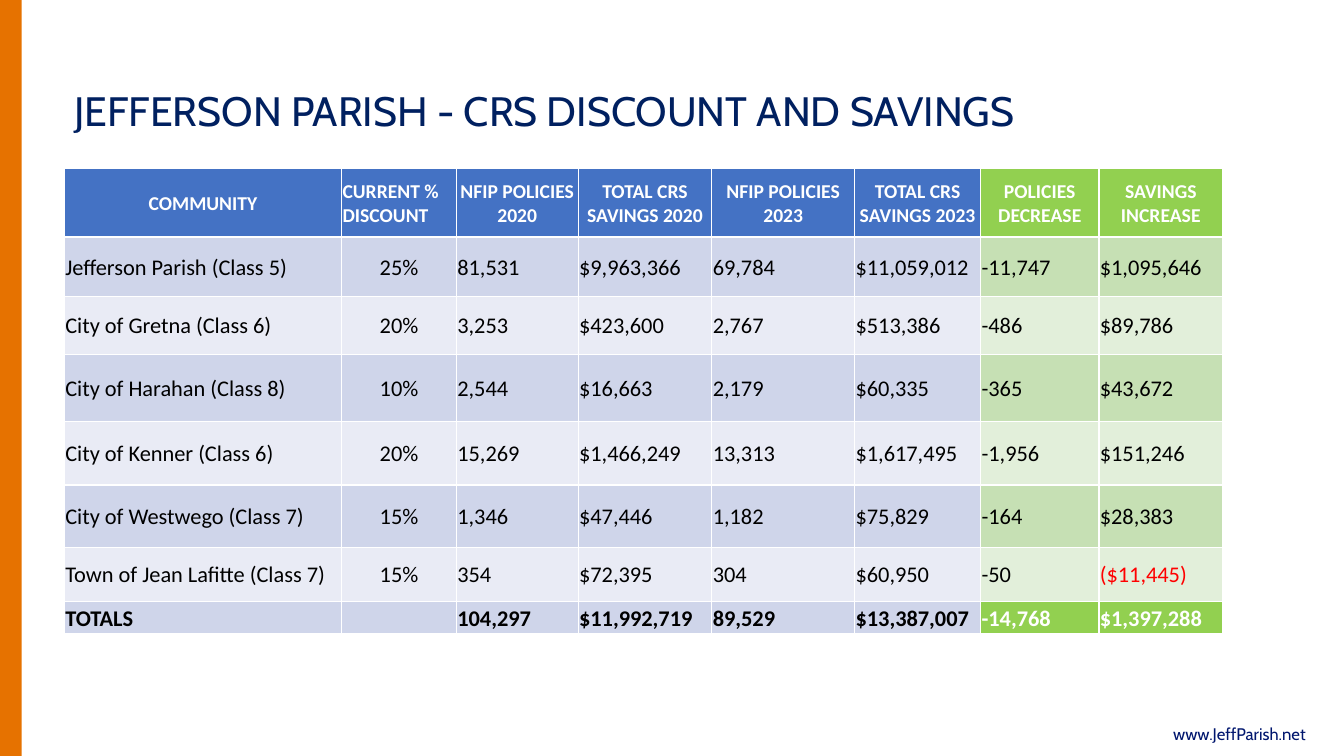
"""Build the Jefferson Parish slide on CRS discount and savings."""
from lxml.etree import SubElement
from pptx import Presentation
from pptx.dml.color import RGBColor
from pptx.enum.shapes import MSO_SHAPE as Shape
from pptx.enum.text import MSO_ANCHOR as Anchor, PP_ALIGN as Align
from pptx.oxml.ns import qn
from pptx.util import Pt

COLORS = {
    "orange": "E67200", "navy": "002060", "link": "00166E",
    "white": "FFFFFF", "black": "000000", "red": "FF0000",
    "blue": "4472C4", "blue dark": "CFD5EA", "blue light": "E9EBF5",
    "green": "92D050", "green dark": "C6E0B4", "green light": "E2EFDA",
}
COLUMN_WIDTHS = [198, 82, 87, 95.5, 102, 90, 84.5, 88.5]
ROW_HEIGHTS = [49, 42.5, 41.5, 47.5, 45.5, 44.5, 39, 23]
ROWS = [
    ["COMMUNITY", "CURRENT % DISCOUNT", "NFIP POLICIES 2020", "TOTAL CRS SAVINGS 2020",
     "NFIP POLICIES 2023", "TOTAL CRS SAVINGS 2023", "POLICIES DECREASE", "SAVINGS INCREASE"],
    ["Jefferson Parish (Class 5)", "25%", "81,531", "$9,963,366",
     "69,784", "$11,059,012", "-11,747", "$1,095,646"],
    ["City of Gretna (Class 6)", "20%", "3,253", "$423,600",
     "2,767", "$513,386", "-486", "$89,786"],
    ["City of Harahan (Class 8)", "10%", "2,544", "$16,663",
     "2,179", "$60,335", "-365", "$43,672"],
    ["City of Kenner (Class 6)", "20%", "15,269", "$1,466,249",
     "13,313", "$1,617,495", "-1,956", "$151,246"],
    ["City of Westwego (Class 7)", "15%", "1,346", "$47,446",
     "1,182", "$75,829", "-164", "$28,383"],
    ["Town of Jean Lafitte (Class 7)", "15%", "354", "$72,395",
     "304", "$60,950", "-50", "($11,445)"],
    ["TOTALS", "", "104,297", "$11,992,719",
     "89,529", "$13,387,007", "-14,768", "$1,397,288"],
]
LAST_ROW = len(ROWS) - 1
FIRST_GREEN_COLUMN = 6


def write(para, text, color, **format_values):
    span = para.add_run()
    span.text = text
    span.font.color.rgb = RGBColor.from_string(COLORS[color])
    for name, value in format_values.items():
        setattr(span.font, name, value)


def add_border(cell, side, width):
    line = SubElement(cell._tc.get_or_add_tcPr(), qn(f"a:ln{side}"), w=str(Pt(width)))
    fill = SubElement(line, qn("a:solidFill"))
    SubElement(fill, qn("a:srgbClr"), val=COLORS["white"])


deck = Presentation()
deck.slide_width, deck.slide_height = Pt(960), Pt(540)
page = deck.slides.add_slide(deck.slide_layouts[6])

stripe = page.shapes.add_shape(Shape.RECTANGLE, Pt(-6), Pt(0), Pt(21.6), Pt(553))
stripe.shadow.inherit = False
stripe.fill.solid()
stripe.fill.fore_color.rgb = RGBColor.from_string(COLORS["orange"])
stripe.line.fill.background()

address = page.shapes.add_textbox(Pt(838), Pt(514.8), Pt(114), Pt(16))
frame = address.text_frame
for side in ("left", "right", "top", "bottom"):
    setattr(frame, f"margin_{side}", Pt(0))
frame.paragraphs[0].line_spacing = Pt(16.8)
write(frame.paragraphs[0], "www.JeffParish.net", "link", name="Cabin", size=Pt(12))

title = page.shapes.add_textbox(Pt(46), Pt(28.8), Pt(828), Pt(104.4))
frame = title.text_frame
frame.word_wrap = True
frame.vertical_anchor = Anchor.MIDDLE
frame.paragraphs[0].line_spacing = 0.9
write(frame.paragraphs[0], "JEFFERSON PARISH - CRS DISCOUNT AND SAVINGS", "navy",
      name="Cabin", size=Pt(29.3))

table = page.shapes.add_table(len(ROWS), len(COLUMN_WIDTHS), Pt(46), Pt(120.5),
                              Pt(sum(COLUMN_WIDTHS)), Pt(sum(ROW_HEIGHTS))).table
table.first_row = table.horz_banding = False
for column, width in zip(table.columns, COLUMN_WIDTHS):
    column.width = Pt(width)
for row, height in zip(table.rows, ROW_HEIGHTS):
    row.height = Pt(height)

for row_index, texts in enumerate(ROWS):
    is_header, is_total = row_index == 0, row_index == LAST_ROW
    for column_index, text in enumerate(texts):
        is_green = column_index >= FIRST_GREEN_COLUMN
        is_strong = is_header or (is_total and is_green)
        hue = "green" if is_green else "blue"
        shade = "" if is_strong else " dark" if row_index % 2 else " light"
        color = "white" if is_strong else "red" if text.startswith("(") else "black"

        cell = table.cell(row_index, column_index)
        cell.vertical_anchor = Anchor.MIDDLE
        cell.margin_left = cell.margin_right = cell.margin_top = Pt(0.7)
        cell.margin_bottom = Pt(0)
        add_border(cell, "L", 1)
        add_border(cell, "R", 1)
        add_border(cell, "T", 1.5 if row_index == 1 else 1)
        add_border(cell, "B", 1.5 if is_header else 1)
        cell.fill.solid()
        cell.fill.fore_color.rgb = RGBColor.from_string(COLORS[hue + shade])

        para = cell.text_frame.paragraphs[0]
        is_centered = is_header != (column_index == 1)
        para.alignment = Align.CENTER if is_centered else Align.LEFT
        if text:
            write(para, text, color, name="Calibri", size=Pt(14 if is_header else 16),
                  bold=is_header or is_total)

deck.save("out.pptx")
